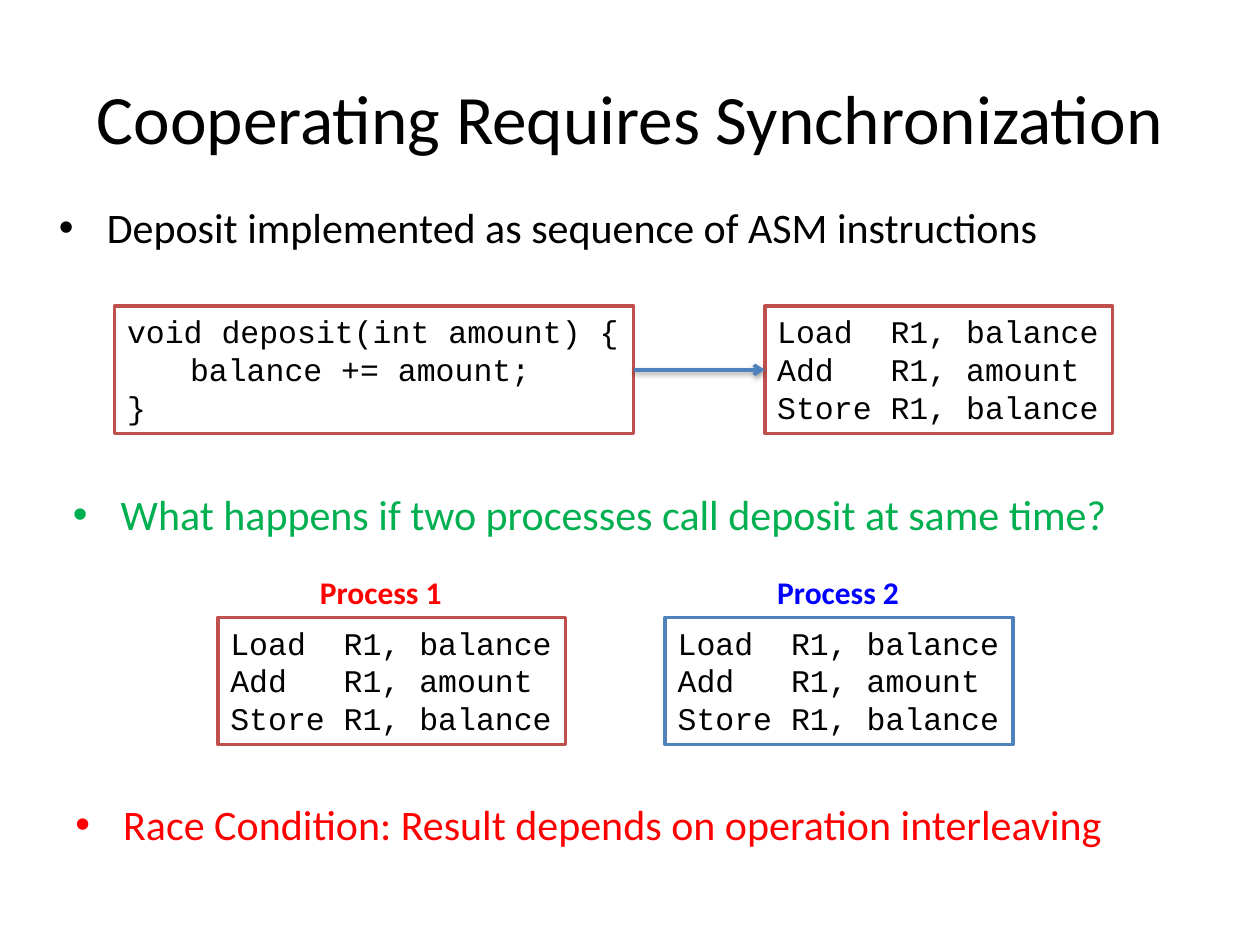
from dataclasses import dataclass

from lxml.etree import SubElement
from pptx import Presentation
from pptx.dml.color import RGBColor
from pptx.enum.shapes import MSO_CONNECTOR, MSO_SHAPE
from pptx.enum.text import MSO_ANCHOR, MSO_AUTO_SIZE, PP_ALIGN
from pptx.oxml.ns import qn
from pptx.util import Inches, Pt


@dataclass(frozen=True)
class Theme:
    sans: str = "Calibri"
    mono: str = "Courier New"
    black: str = "000000"
    white: str = "FFFFFF"
    red: str = "FF0000"
    green: str = "00B050"
    blue: str = "0000FF"
    brick: str = "C0504D"
    steel: str = "4F81BD"
    title: float = 39.6
    body: float = 24
    small: float = 18
    line: float = 2


THEME = Theme()
DEPOSIT = ["void deposit(int amount) {", "balance += amount;", "}"]
ASSEMBLY = ["Load  R1, balance", "Add   R1, amount", "Store R1, balance"]
CODE_HEIGHT = 1.01
ASSEMBLY_WIDTH = 2.76


def rgb(value):
    return RGBColor.from_string(value)


def write(p, text, size=THEME.small, font=THEME.sans, color=THEME.black,
          bold=False, align=PP_ALIGN.LEFT):
    p.alignment = align
    r = p.add_run()
    r.text = text
    r.font.size = Pt(size)
    r.font.name = font
    r.font.bold = bold
    r.font.color.rgb = rgb(color)


def add_text(slide, box, text, wrap=True, anchor=MSO_ANCHOR.TOP, **style):
    """Add a one-paragraph text box and return its paragraph."""
    tf = slide.shapes.add_textbox(*map(Inches, box)).text_frame
    tf.word_wrap = wrap
    tf.vertical_anchor = anchor
    p = tf.paragraphs[0]
    write(p, text, **style)
    return p


def add_bullet(slide, box, text, color=THEME.black):
    p = add_text(slide, box, text, size=THEME.body, color=color)
    p.space_before = Pt(0.2 * THEME.body)
    pPr = p._p.get_or_add_pPr()
    pPr.set("marL", str(Inches(0.38)))
    pPr.set("indent", str(Inches(-0.38)))
    SubElement(pPr, qn("a:buFont"), typeface="Arial")
    SubElement(pPr, qn("a:buChar"), char="•")


def add_code(slide, box, lines, border=THEME.brick, indented=()):
    """Add a bordered code box; indented holds the indexes of inner lines."""
    sp = slide.shapes.add_shape(MSO_SHAPE.RECTANGLE, *map(Inches, box))
    sp.shadow.inherit = False
    sp.fill.solid()
    sp.fill.fore_color.rgb = rgb(THEME.white)
    sp.line.color.rgb = rgb(border)
    sp.line.width = Pt(THEME.line)
    tf = sp.text_frame
    tf.word_wrap = False
    tf.auto_size = MSO_AUTO_SIZE.SHAPE_TO_FIT_TEXT
    tf.vertical_anchor = MSO_ANCHOR.TOP
    for i, line in enumerate(lines):
        p = tf.add_paragraph() if i else tf.paragraphs[0]
        write(p, line, font=THEME.mono)
        if i in indented:
            p._p.get_or_add_pPr().set("marL", str(Inches(0.5)))
    return sp


def add_arrow(slide, start, end):
    """Join the right side of start to the left side of end."""
    arrow = slide.shapes.add_connector(MSO_CONNECTOR.STRAIGHT, 0, 0, 0, 0)
    arrow.begin_connect(start, 3)
    arrow.end_connect(end, 1)
    arrow.line.color.rgb = rgb(THEME.steel)
    arrow.line.width = Pt(THEME.line)
    SubElement(arrow.line._get_or_add_ln(), qn("a:tailEnd"), type="arrow")
    effects = SubElement(arrow._element.spPr, qn("a:effectLst"))
    shadow = SubElement(effects, qn("a:outerShdw"), blurRad=str(Pt(3.1)),
                        dist=str(Pt(1.6)), dir="5400000", rotWithShape="0")
    color = SubElement(shadow, qn("a:srgbClr"), val=THEME.black)
    SubElement(color, qn("a:alpha"), val="38000")


def add_translation(slide, left, top):
    """Place the deposit function beside its assembly instructions."""
    source = add_code(slide, (left, top, 4.12, CODE_HEIGHT), DEPOSIT, indented=(1,))
    target = add_code(slide, (left + 5.16, top, ASSEMBLY_WIDTH, CODE_HEIGHT), ASSEMBLY)
    add_arrow(slide, source, target)


def add_process(slide, left, top, name, label_offset, color, border):
    """Place a process name above its instructions."""
    add_code(slide, (left, top + 0.4, ASSEMBLY_WIDTH, CODE_HEIGHT), ASSEMBLY, border)
    add_text(slide, (left + label_offset, top, 1.18, 0.4), name,
             wrap=False, color=color, bold=True)


def build_slide(prs):
    slide = prs.slides.add_slide(prs.slide_layouts[6])
    add_text(slide, (0.5, 0.3, 9, 1.25), "Cooperating Requires Synchronization",
             anchor=MSO_ANCHOR.MIDDLE, size=THEME.title, align=PP_ALIGN.CENTER)
    add_bullet(slide, (0.37, 1.55, 9, 0.56),
               "Deposit implemented as sequence of ASM instructions")
    add_translation(slide, 0.91, 2.43)
    add_bullet(slide, (0.48, 3.83, 9, 0.56),
               "What happens if two processes call deposit at same time?", THEME.green)
    add_process(slide, 1.73, 4.5, "Process 1", 0.71, THEME.red, THEME.brick)
    add_process(slide, 5.28, 4.5, "Process 2", 0.79, THEME.blue, THEME.steel)
    add_bullet(slide, (0.5, 6.29, 9, 0.56),
               "Race Condition: Result depends on operation interleaving", THEME.red)


def main():
    prs = Presentation()
    prs.slide_width = Inches(10)
    prs.slide_height = Inches(7.5)
    build_slide(prs)
    prs.save("out.pptx")


if __name__ == "__main__":
    main()
